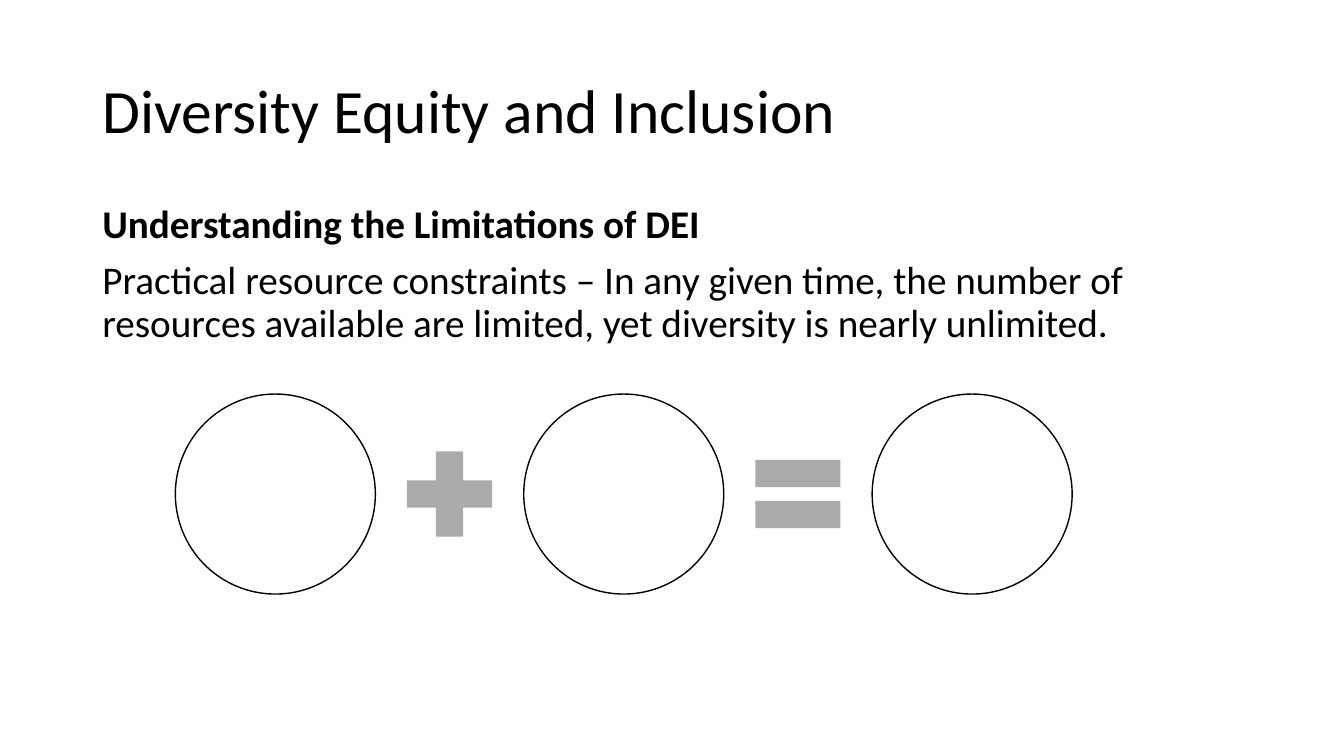
import pptx
import pptx.util
import pptx.dml.color
import pptx.enum.shapes
import pptx.enum.text

Cm, Pt = pptx.util.Cm, pptx.util.Pt
Kind = pptx.enum.shapes.MSO_SHAPE
Anchor = pptx.enum.text.MSO_ANCHOR
Align = pptx.enum.text.PP_ALIGN

TITLE = "Diversity Equity and Inclusion"
BODY = [
    ("Understanding the Limitations of DEI", "head"),
    ("Practical resource constraints – In any given time, the number of "
     "resources available are limited, yet diversity is nearly unlimited.", "body"),
]
SUM = ["ring", "plus", "ring", "equal", "ring"]

THEME = {
    "ink": "000000",
    "fonts": {
        "title": {"name": "Calibri", "size": Pt(44), "bold": False},
        "head": {"name": "Calibri", "size": Pt(28), "bold": True},
        "body": {"name": "Calibri", "size": Pt(28), "bold": False},
    },
    "parts": {
        "ring": {"kind": Kind.OVAL, "size": 5.04, "fill": "FFFFFF", "line": "000000"},
        "plus": {"kind": Kind.MATH_PLUS, "size": 2.92, "fill": "ABABAB", "line": None},
        "equal": {"kind": Kind.MATH_EQUAL, "size": 2.92, "fill": "ABABAB", "line": None},
    },
}

LEFT, WIDTH = 2.33, 29.21
START, STEP, MIDDLE = 6.94, 4.39, 12.45


def tint(code):
    return pptx.dml.color.RGBColor.from_string(code)


def apply(target, values):
    for name, value in values.items():
        setattr(target, name, value)


def write(para, text, style, before=0):
    apply(para, {"line_spacing": 0.9, "space_before": Pt(before),
                 "alignment": Align.LEFT})
    run = para.add_run()
    run.text = text
    apply(run.font, THEME["fonts"][style])
    run.font.color.rgb = tint(THEME["ink"])


def place(shape, top, height):
    apply(shape, {"left": Cm(LEFT), "top": Cm(top),
                  "width": Cm(WIDTH), "height": Cm(height)})


def add_title(slide):
    title = slide.shapes.title
    place(title, 1.01, 3.68)
    apply(title.text_frame, {"word_wrap": True, "vertical_anchor": Anchor.MIDDLE})
    write(title.text_frame.paragraphs[0], TITLE, "title")


def add_body(slide):
    box = slide.shapes.add_textbox(0, 0, 0, 0)
    place(box, 5.03, 12.09)
    frame = box.text_frame
    apply(frame, {"word_wrap": True, "vertical_anchor": Anchor.TOP})
    for i, (text, style) in enumerate(BODY):
        para = frame.add_paragraph() if i else frame.paragraphs[0]
        write(para, text, style, before=10)


def add_sum(slide):
    """Draw the rings and signs on evenly spaced centres."""
    for i, name in enumerate(SUM):
        part = THEME["parts"][name]
        size = part["size"]
        shape = slide.shapes.add_shape(
            part["kind"], Cm(START + i * STEP - size / 2), Cm(MIDDLE - size / 2),
            Cm(size), Cm(size))
        shape.shadow.inherit = False
        shape.fill.solid()
        shape.fill.fore_color.rgb = tint(part["fill"])
        if part["line"]:
            shape.line.color.rgb = tint(part["line"])
            shape.line.width = Pt(1)
        else:
            shape.line.fill.background()


def main():
    deck = pptx.Presentation()
    apply(deck, {"slide_width": Cm(33.87), "slide_height": Cm(19.05)})
    slide = deck.slides.add_slide(deck.slide_layouts[5])
    add_title(slide)
    add_body(slide)
    add_sum(slide)
    deck.save("out.pptx")


if __name__ == "__main__":
    main()
